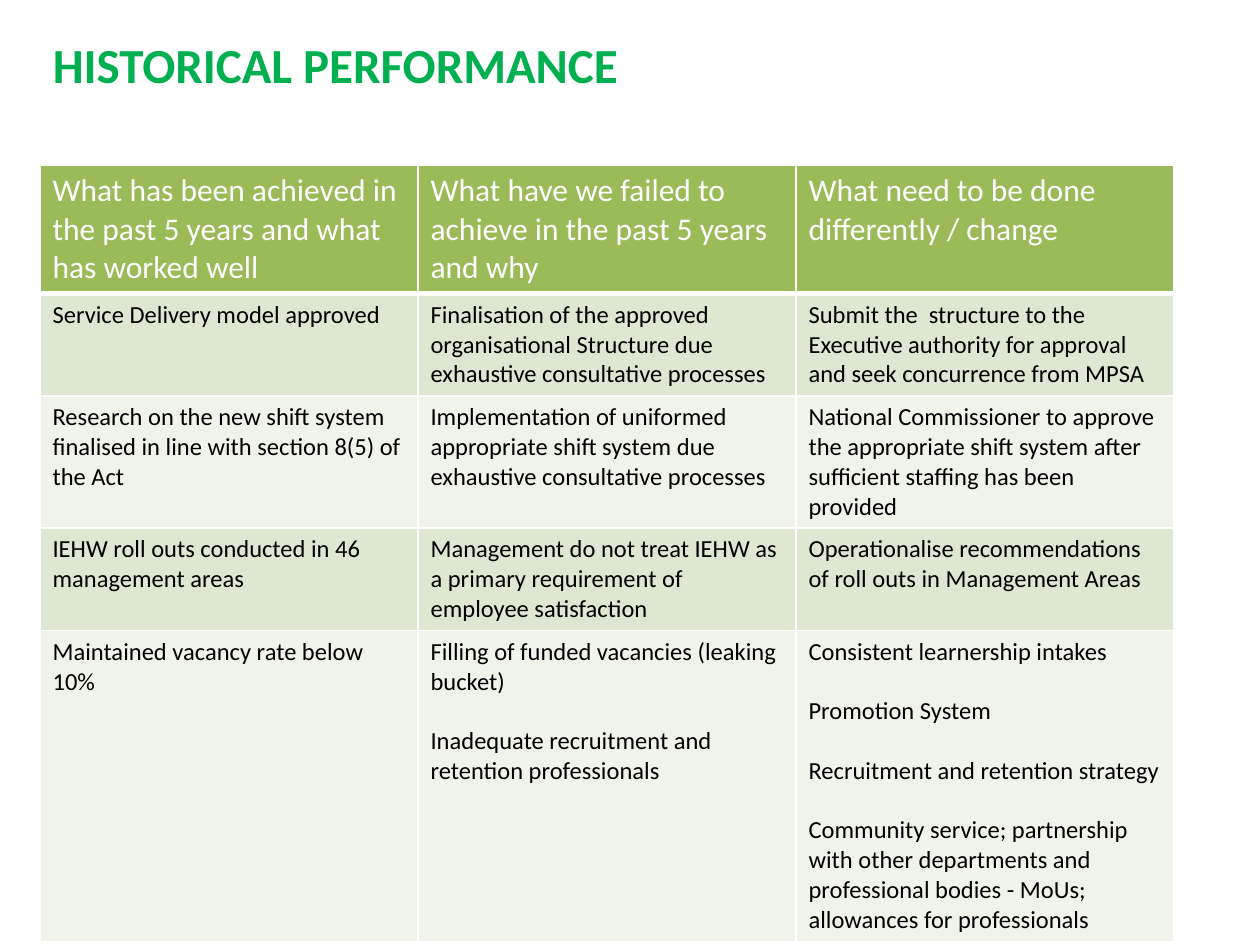
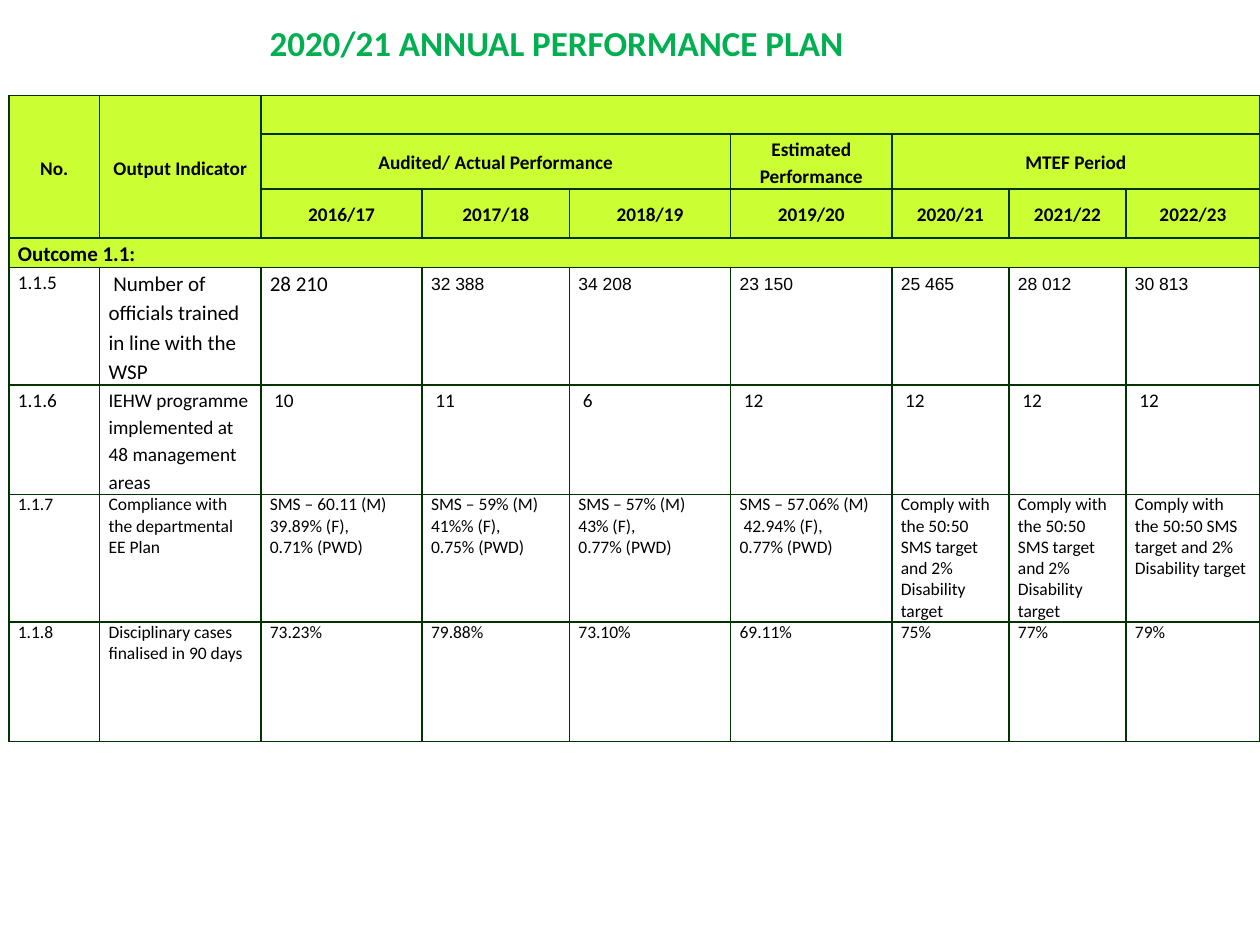
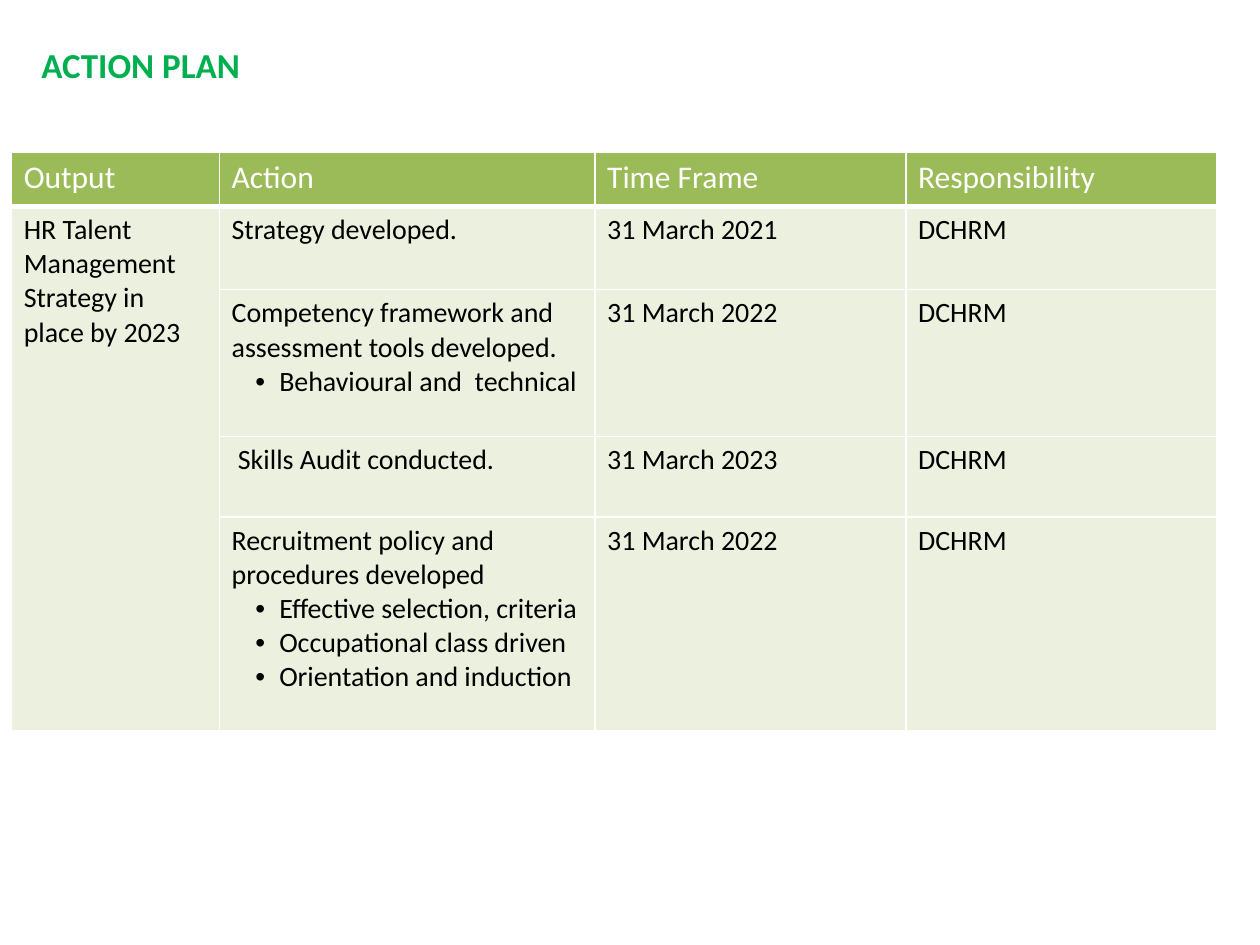
from dataclasses import dataclass
from itertools import cycle

from lxml import etree
from pptx import Presentation
from pptx.dml.color import RGBColor
from pptx.enum.text import MSO_ANCHOR, MSO_AUTO_SIZE, PP_ALIGN
from pptx.oxml.ns import qn
from pptx.slide import Slide
from pptx.table import _Cell
from pptx.text.text import TextFrame, _Paragraph
from pptx.util import Cm, Length, Pt

LEFT = PP_ALIGN.LEFT
CENTER = PP_ALIGN.CENTER
TOP = MSO_ANCHOR.TOP
MIDDLE = MSO_ANCHOR.MIDDLE
FIXED = MSO_AUTO_SIZE.NONE
TITLE_ONLY = 5
BULLET = "• "


@dataclass(frozen=True)
class Theme:
    font: str = "Calibri"
    plain: str = "Arial"
    title: str = "00B050"
    ink: str = "000000"
    white: str = "FFFFFF"
    head: str = "9BBB59"
    dark: str = "DEE7D1"
    light: str = "EFF3EA"
    pale: str = "EBF1DE"
    lime: str = "CCFF33"
    line: str = "003300"
    large: int = 28
    medium: int = 20
    label: int = 18
    action: int = 16
    body: int = 14
    note: int = 12
    small: int = 11
    tiny: int = 10


THEME = Theme()


@dataclass(frozen=True)
class Look:
    size: int
    tint: str = THEME.ink
    bold: bool = False
    font: str = THEME.font
    align: PP_ALIGN = LEFT
    lead: float | Length = 1.0
    gap: int = 0
    anchor: MSO_ANCHOR = TOP


@dataclass(frozen=True)
class Row:
    height: float
    fill: str
    looks: tuple[Look, ...]
    texts: tuple[str, ...]


@dataclass(frozen=True)
class Grid:
    left: float
    top: float
    widths: tuple[float, ...]
    rows: tuple[Row, ...]
    spans: tuple[tuple[int, int, int, int], ...] = ()
    inset: tuple[float, float] = (0.25, 0.13)
    line: str = THEME.white
    rule: float = 3


@dataclass(frozen=True)
class Title:
    text: str
    left: float
    top: float
    width: float
    height: float
    size: int
    wrap: bool = True


@dataclass(frozen=True)
class Page:
    title: Title
    grid: Grid


def dot(para: _Paragraph) -> None:
    props = para._p.get_or_add_pPr()
    props.set("marL", str(Cm(0.96)))
    props.set("indent", str(-Cm(0.48)))
    face = etree.SubElement(props, qn("a:buFont"))
    face.set("typeface", THEME.plain)
    etree.SubElement(props, qn("a:buChar")).set("char", BULLET.strip())


def write(frame: TextFrame, text: str, *, size: int, tint: str = THEME.ink,
          bold: bool = False, font: str = THEME.font, align: PP_ALIGN = LEFT,
          lead: float | Length = 1.0, gap: int = 0) -> None:
    for index, part in enumerate(text.split("\n")):
        para = frame.add_paragraph() if index else frame.paragraphs[0]
        if part.startswith(BULLET):
            dot(para)
        para.alignment = align
        para.line_spacing = lead
        if index and gap:
            para.space_before = Pt(gap)
        run = para.add_run()
        run.text = part.removeprefix(BULLET)
        run.font.name = font
        run.font.size = Pt(size)
        run.font.bold = bold
        run.font.color.rgb = RGBColor.from_string(tint)


def edge(cell: _Cell, tint: str, top: float, base: float) -> None:
    props = cell._tc.get_or_add_tcPr()
    for side, width in (("L", 1), ("R", 1), ("T", top), ("B", base)):
        line = etree.SubElement(props, qn(f"a:ln{side}"), w=str(Pt(width)))
        fill = etree.SubElement(line, qn("a:solidFill"))
        etree.SubElement(fill, qn("a:srgbClr"), val=tint)


def paint(cell: _Cell, text: str, look: Look, fill: str,
          inset: tuple[float, float]) -> None:
    cell.fill.solid()
    cell.fill.fore_color.rgb = RGBColor.from_string(fill)
    cell.margin_left = cell.margin_right = Cm(inset[0])
    cell.margin_top = cell.margin_bottom = Cm(inset[1])
    cell.vertical_anchor = look.anchor
    if text:
        write(cell.text_frame, text, size=look.size, tint=look.tint,
              bold=look.bold, font=look.font, align=look.align,
              lead=look.lead, gap=look.gap)


def draw_grid(slide: Slide, grid: Grid) -> None:
    table = slide.shapes.add_table(
        len(grid.rows), len(grid.widths), Cm(grid.left), Cm(grid.top),
        Cm(sum(grid.widths)), Cm(sum(row.height for row in grid.rows))).table
    table.first_row = table.horz_banding = False
    for column, width in zip(table.columns, grid.widths):
        column.width = Cm(width)
    for y, row in enumerate(grid.rows):
        table.rows[y].height = Cm(row.height)
        for x, (text, look) in enumerate(zip(row.texts, cycle(row.looks))):
            cell = table.cell(y, x)
            edge(cell, grid.line, grid.rule if y == 1 else 1,
                 grid.rule if y == 0 else 1)
            paint(cell, text, look, row.fill, grid.inset)
    for top, left, base, right in grid.spans:
        table.cell(top, left).merge(table.cell(base, right))


def draw_title(slide: Slide, title: Title) -> None:
    shape = slide.shapes.title
    shape.left, shape.top = Cm(title.left), Cm(title.top)
    shape.width, shape.height = Cm(title.width), Cm(title.height)
    frame = shape.text_frame
    frame.auto_size = FIXED
    frame.word_wrap = title.wrap
    frame.vertical_anchor = TOP
    write(frame, title.text, size=title.size, tint=THEME.title, bold=True)


HEAD = Look(THEME.label, THEME.white)
BODY = Look(THEME.body, gap=17)
ACTION = Look(THEME.action)
YEAR = Look(THEME.small, bold=True, align=CENTER, lead=1.15, anchor=MIDDLE)
GROUP = Look(THEME.note, bold=True, lead=1.15)
SMALL = Look(THEME.small, lead=1.15)
NOTE = Look(THEME.note, lead=1.15)
COUNT = Look(THEME.tiny, font=THEME.plain, lead=Pt(15.2))
TINY = Look(THEME.tiny)
TARGET = "Comply with the 50:50 SMS target and 2% Disability target"
OWNER = "DCHRM"

HISTORY = Page(
    Title("HISTORICAL PERFORMANCE", 0.81, 0.56, 13.79, 1.45, THEME.large),
    Grid(0.81, 3.33, (7.62,) * 3, (
        Row(2.52, THEME.head, (HEAD,), (
            "What has been achieved in the past 5 years and what has worked well",
            "What have we failed to achieve in the past 5 years and why",
            "What need to be done differently / change")),
        Row(2.03, THEME.dark, (BODY,), (
            "Service Delivery model approved",
            "Finalisation of the approved organisational Structure due "
            "exhaustive consultative processes",
            "Submit the  structure to the Executive authority for approval "
            "and seek concurrence from MPSA")),
        Row(2.64, THEME.light, (BODY,), (
            "Research on the new shift system finalised in line with "
            "section 8(5) of the Act",
            "Implementation of uniformed appropriate shift system due "
            "exhaustive consultative processes",
            "National Commissioner to approve the appropriate shift system "
            "after sufficient staffing has been provided")),
        Row(2.03, THEME.dark, (BODY,), (
            "IEHW roll outs conducted in 46 management areas",
            "Management do not treat IEHW as a primary requirement of "
            "employee satisfaction",
            "Operationalise recommendations of roll outs in Management Areas")),
        Row(6.18, THEME.light, (BODY,), (
            "Maintained vacancy rate below 10%",
            "Filling of funded vacancies (leaking bucket)\n"
            "Inadequate recruitment and retention professionals",
            "Consistent learnership intakes\nPromotion System\n"
            "Recruitment and retention strategy\n"
            "Community service; partnership with other departments and "
            "professional bodies - MoUs; allowances for professionals")),
    )))

ANNUAL = Page(
    Title("2020/21 ANNUAL PERFORMANCE PLAN", 5.18, 0.3, 12.17, 1.12,
          THEME.medium, wrap=False),
    Grid(0.18, 1.93, (1.83, 3.25, 3.25, 2.97, 3.25, 3.25, 2.36, 2.36, 2.7), (
        Row(0.76, THEME.lime, (YEAR,),
            ("No.", "Output Indicator") + ("",) * 7),
        Row(1.07, THEME.lime, (YEAR,), (
            "", "", "Audited/ Actual Performance", "", "",
            "Estimated Performance", "MTEF Period", "", "")),
        Row(0.99, THEME.lime, (YEAR,), ("", "") + tuple(
            f"{year}/{year - 1999}" for year in range(2016, 2023))),
        Row(0.59, THEME.lime, (GROUP,), ("Outcome 1.1:",) + ("",) * 8),
        Row(2.34, THEME.white, (SMALL, NOTE, NOTE) + (COUNT,) * 6, (
            "1.1.5", " Number of officials trained in line with the WSP",
            "28 210", "32 388", "34 208", "23 150", "25 465", "28 012",
            "30 813")),
        Row(2.2, THEME.white, (SMALL,), (
            "1.1.6", "IEHW programme implemented at 48 management areas",
            " 10", " 11", " 6") + (" 12",) * 4),
        Row(2.54, THEME.white, (TINY,), (
            "1.1.7", "Compliance with the departmental EE Plan",
            "SMS – 60.11 (M)\n39.89% (F),\n0.71% (PWD)",
            "SMS – 59% (M)\n41%% (F),\n0.75% (PWD)",
            "SMS – 57% (M)\n43% (F),\n0.77% (PWD)",
            "SMS – 57.06% (M)\n 42.94% (F),\n0.77% (PWD)") + (TARGET,) * 3),
        Row(2.41, THEME.white, (TINY,), (
            "1.1.8", "Disciplinary cases finalised in 90 days", "73.23%",
            "79.88%", "73.10%", "69.11%", "75%", "77%", "79%")),
    ), spans=((0, 0, 2, 0), (0, 1, 2, 1), (0, 2, 0, 8), (1, 2, 1, 4),
              (1, 6, 1, 8), (3, 0, 3, 8)),
        inset=(0.18, 0), line=THEME.line, rule=1))

PLAN = Page(
    Title("ACTION PLAN", 0.58, 0.74, 17.81, 1.12, THEME.medium),
    Grid(0.23, 3.07, (4.19, 7.57, 6.27, 6.27), (
        Row(1.09, THEME.head, (HEAD,),
            ("Output", "Action", "Time Frame", "Responsibility")),
        Row(1.68, THEME.pale, (ACTION,), (
            "HR Talent Management Strategy in place by 2023",
            "Strategy developed.", "31 March 2021", OWNER)),
        Row(2.96, THEME.pale, (ACTION,), (
            "", "Competency framework and assessment tools developed.\n"
            "• Behavioural and  technical", "31 March 2022", OWNER)),
        Row(1.62, THEME.pale, (ACTION,), (
            "", " Skills Audit conducted.", "31 March 2023", OWNER)),
        Row(4.32, THEME.pale, (ACTION,), (
            "", "Recruitment policy and procedures developed\n"
            "• Effective selection, criteria\n• Occupational class driven\n"
            "• Orientation and induction", "31 March 2022", OWNER)),
    ), spans=((1, 0, 4, 0),)))


def main() -> None:
    deck = Presentation()
    deck.slide_width, deck.slide_height = Cm(25.4), Cm(19.05)
    for page in (HISTORY, ANNUAL, PLAN):
        slide = deck.slides.add_slide(deck.slide_layouts[TITLE_ONLY])
        draw_title(slide, page.title)
        draw_grid(slide, page.grid)
    deck.save("out.pptx")


if __name__ == "__main__":
    main()
